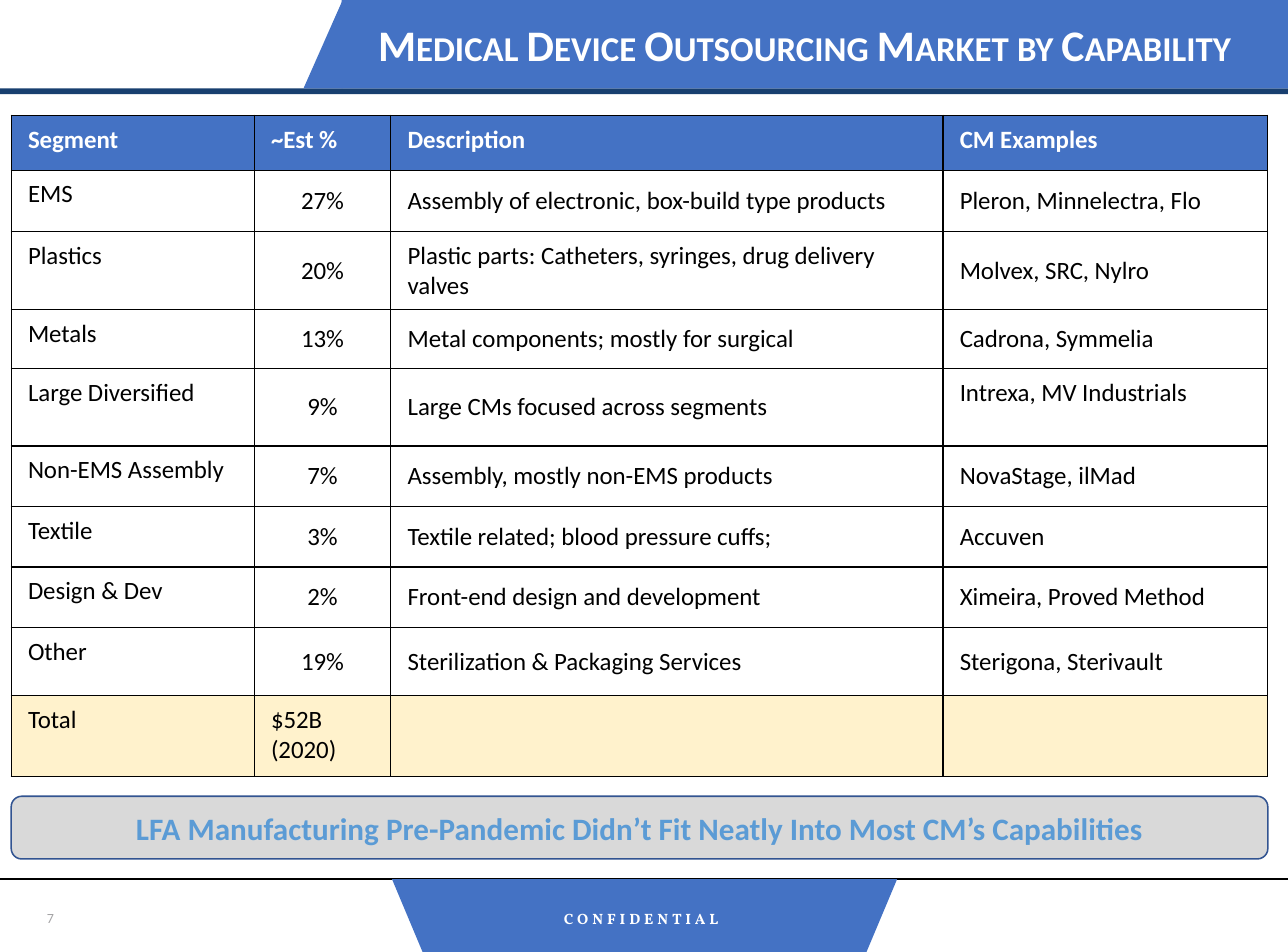
from typing import NamedTuple, Optional

from lxml.etree import SubElement
from pptx import Presentation
from pptx.dml.color import RGBColor
from pptx.enum.shapes import MSO_CONNECTOR, MSO_SHAPE as Shape
from pptx.enum.text import MSO_ANCHOR as Anchor, MSO_AUTO_SIZE, PP_ALIGN as Align
from pptx.oxml.ns import qn
from pptx.util import Inches, Pt

BLUE, NAVY, WHITE, BLACK = "4472C4", "183F6F", "FFFFFF", "000000"
CREAM, GREY, LIGHT_BLUE, OUTLINE = "FFF2CC", "D9D9D9", "5B9BD5", "325491"
WIDTH, HEIGHT = 11.5, 8.5
FOOTER_TOP = 7.85


class Box(NamedTuple):
    left: float
    top: float
    width: float
    height: float

    def lengths(self) -> list:
        return [Inches(value) for value in self]


class Panel(NamedTuple):
    preset: Shape
    box: Box
    fill: str
    flip: Optional[str] = None
    adjustment: Optional[float] = None


class Style(NamedTuple):
    size: float
    color: str
    bold: bool = False
    font: str = "Calibri"
    extras: tuple = ()


class Segment(NamedTuple):
    name: str
    share: str
    description: str
    examples: str
    height: float
    examples_anchor: Anchor = Anchor.MIDDLE


PANELS = [
    Panel(Shape.RECTANGLE, Box(0, 0.79, WIDTH, 0.05), NAVY),
    Panel(Shape.RECTANGLE, Box(3.05, 0, 8.45, 0.79), BLUE),
    Panel(Shape.RIGHT_TRIANGLE, Box(2.71, 0, 0.35, 0.79), BLUE, "flipH"),
    Panel(Shape.TRAPEZOID, Box(3.5, FOOTER_TOP, 4.51, 0.65), BLUE, "flipV", 0.42),
    Panel(Shape.RECTANGLE, Box(4.92, 8.09, 1.61, 0.27), BLUE),
]

HEADERS = ["Segment", "~Est %", "Description", "CM Examples"]
COLUMN_WIDTHS = [2.17, 1.22, 4.93, 2.9]
HEADER_HEIGHT, TOTAL_HEIGHT = 0.49, 0.72
SEGMENTS = [
    Segment("EMS", "27%", "Assembly of electronic, box-build type products",
            "Pleron, Minnelectra, Flo", 0.55),
    Segment("Plastics", "20%",
            "Plastic parts: Catheters, syringes, drug delivery valves",
            "Molvex, SRC, Nylro", 0.69),
    Segment("Metals", "13%", "Metal components; mostly for surgical",
            "Cadrona, Symmelia", 0.53),
    Segment("Large Diversified", "9%", "Large CMs focused across segments",
            "Intrexa, MV Industrials", 0.69, Anchor.TOP),
    Segment("Non-EMS Assembly", "7%", "Assembly, mostly non-EMS products",
            "NovaStage, ilMad", 0.54),
    Segment("Textile", "3%", "Textile related; blood pressure cuffs;",
            "Accuven", 0.54),
    Segment("Design & Dev", "2%", "Front-end design and development",
            "Ximeira, Proved Method", 0.54),
    Segment("Other", "19%", "Sterilization & Packaging Services",
            "Sterigona, Sterivault", 0.61),
]

HEADER_STYLE = Style(16, WHITE, bold=True)
BODY_STYLE = Style(16, BLACK)


def rgb(color: str) -> RGBColor:
    return RGBColor.from_string(color)


def add_run(paragraph, text: str, style: Style) -> None:
    run = paragraph.add_run()
    run.text = text
    run.font.name = style.font
    run.font.size = Pt(style.size)
    run.font.bold = style.bold
    run.font.color.rgb = rgb(style.color)
    for name, value in style.extras:
        run.font._element.set(name, value)


def write(frame, text: str, style: Style, align: Align) -> None:
    """Fill a vertically centred text frame with one paragraph."""
    frame.word_wrap = True
    frame.vertical_anchor = Anchor.MIDDLE
    paragraph = frame.paragraphs[0]
    paragraph.alignment = align
    add_run(paragraph, text, style)


def add_panel(slide, panel: Panel):
    shape = slide.shapes.add_shape(panel.preset, *panel.box.lengths())
    shape.shadow.inherit = False
    shape.fill.solid()
    shape.fill.fore_color.rgb = rgb(panel.fill)
    shape.line.fill.background()
    if panel.flip:
        shape.element.spPr.xfrm.set(panel.flip, "1")
    if panel.adjustment is not None:
        shape.adjustments[0] = panel.adjustment
    return shape


def add_label(slide, box: Box, text: str, style: Style, align: Align) -> None:
    label = slide.shapes.add_textbox(*box.lengths())
    write(label.text_frame, text, style, align)


def add_footer_rule(slide) -> None:
    y = Inches(FOOTER_TOP)
    rule = slide.shapes.add_connector(MSO_CONNECTOR.STRAIGHT, 0, y, Inches(WIDTH), y)
    rule.line.color.rgb = rgb(BLACK)
    rule.line.width = Pt(1)
    SubElement(rule.element.spPr, qn("a:effectLst"))


def add_borders(cell) -> None:
    properties = cell._tc.get_or_add_tcPr()
    for side in ("lnL", "lnR", "lnT", "lnB"):
        border = SubElement(properties, qn(f"a:{side}"), w=str(Pt(1)))
        fill = SubElement(border, qn("a:solidFill"))
        SubElement(fill, qn("a:srgbClr"), val=BLACK)


def fill_cell(cell, text: str, style: Style, fill: Optional[str] = None,
              anchor: Anchor = Anchor.TOP, align: Align = Align.LEFT) -> None:
    """Write one paragraph per line of text, with borders and an optional fill."""
    add_borders(cell)
    if fill:
        cell.fill.solid()
        cell.fill.fore_color.rgb = rgb(fill)
    else:
        cell.fill.background()
    cell.margin_left = cell.margin_right = Inches(0.15)
    cell.margin_top = cell.margin_bottom = Inches(0.08)
    cell.vertical_anchor = anchor
    for index, line in enumerate(text.splitlines()):
        frame = cell.text_frame
        paragraph = frame.add_paragraph() if index else frame.paragraphs[0]
        paragraph.alignment = align
        add_run(paragraph, line, style)


def add_market_table(slide) -> None:
    heights = [HEADER_HEIGHT, *(segment.height for segment in SEGMENTS), TOTAL_HEIGHT]
    box = Box(0.1, 1.03, sum(COLUMN_WIDTHS), sum(heights))
    table = slide.shapes.add_table(len(heights), len(HEADERS), *box.lengths()).table
    for column, width in zip(table.columns, COLUMN_WIDTHS):
        column.width = Inches(width)
    for row, height in zip(table.rows, heights):
        row.height = Inches(height)

    for column, header in enumerate(HEADERS):
        fill_cell(table.cell(0, column), header, HEADER_STYLE, BLUE)
    for row, segment in enumerate(SEGMENTS, start=1):
        name, share, description, examples = (table.cell(row, c) for c in range(4))
        fill_cell(name, segment.name, BODY_STYLE)
        fill_cell(share, segment.share, BODY_STYLE, None, Anchor.MIDDLE, Align.CENTER)
        fill_cell(description, segment.description, BODY_STYLE, None, Anchor.MIDDLE)
        fill_cell(examples, segment.examples, BODY_STYLE, None, segment.examples_anchor)
    for column, total in enumerate(["Total", "$52B\n(2020)", "", ""]):
        fill_cell(table.cell(len(heights) - 1, column), total, BODY_STYLE, CREAM)


def set_title(slide) -> None:
    title = slide.shapes.title
    slide.shapes.element.append(title.element)  # in front of the banner
    title.left, title.top, title.width, title.height = Box(2.87, 0, 8.63, 0.84).lengths()
    write(title.text_frame, "Medical Device Outsourcing Market by Capability",
          Style(28, WHITE, bold=True, extras=(("cap", "small"),)), Align.CENTER)
    title.text_frame.auto_size = MSO_AUTO_SIZE.NONE
    title.text_frame.paragraphs[0].line_spacing = 0.9


def add_takeaway(slide) -> None:
    takeaway = add_panel(
        slide, Panel(Shape.ROUNDED_RECTANGLE, Box(0.1, 7.11, 11.22, 0.56), GREY))
    takeaway.line.color.rgb = rgb(OUTLINE)
    takeaway.line.width = Pt(1)
    write(takeaway.text_frame,
          "LFA Manufacturing Pre-Pandemic Didn’t Fit Neatly Into Most CM’s Capabilities",
          Style(20, LIGHT_BLUE, bold=True), Align.CENTER)


def main() -> None:
    deck = Presentation()
    deck.slide_width, deck.slide_height = Inches(WIDTH), Inches(HEIGHT)
    slide = deck.slides.add_slide(deck.slide_layouts[5])
    add_footer_rule(slide)
    for panel in PANELS:
        add_panel(slide, panel)
    add_label(slide, Box(4.14, 8.07, 3.17, 0.26), "CONFIDENTIAL",
              Style(9.6, WHITE, True, "Vollkorn", (("spc", "250"),)), Align.CENTER)
    set_title(slide)
    add_label(slide, Box(0.1, 8.01, 0.48, 0.37), "7", Style(9, "A5A4A6"), Align.RIGHT)
    add_market_table(slide)
    add_takeaway(slide)
    deck.save("out.pptx")


if __name__ == "__main__":
    main()
